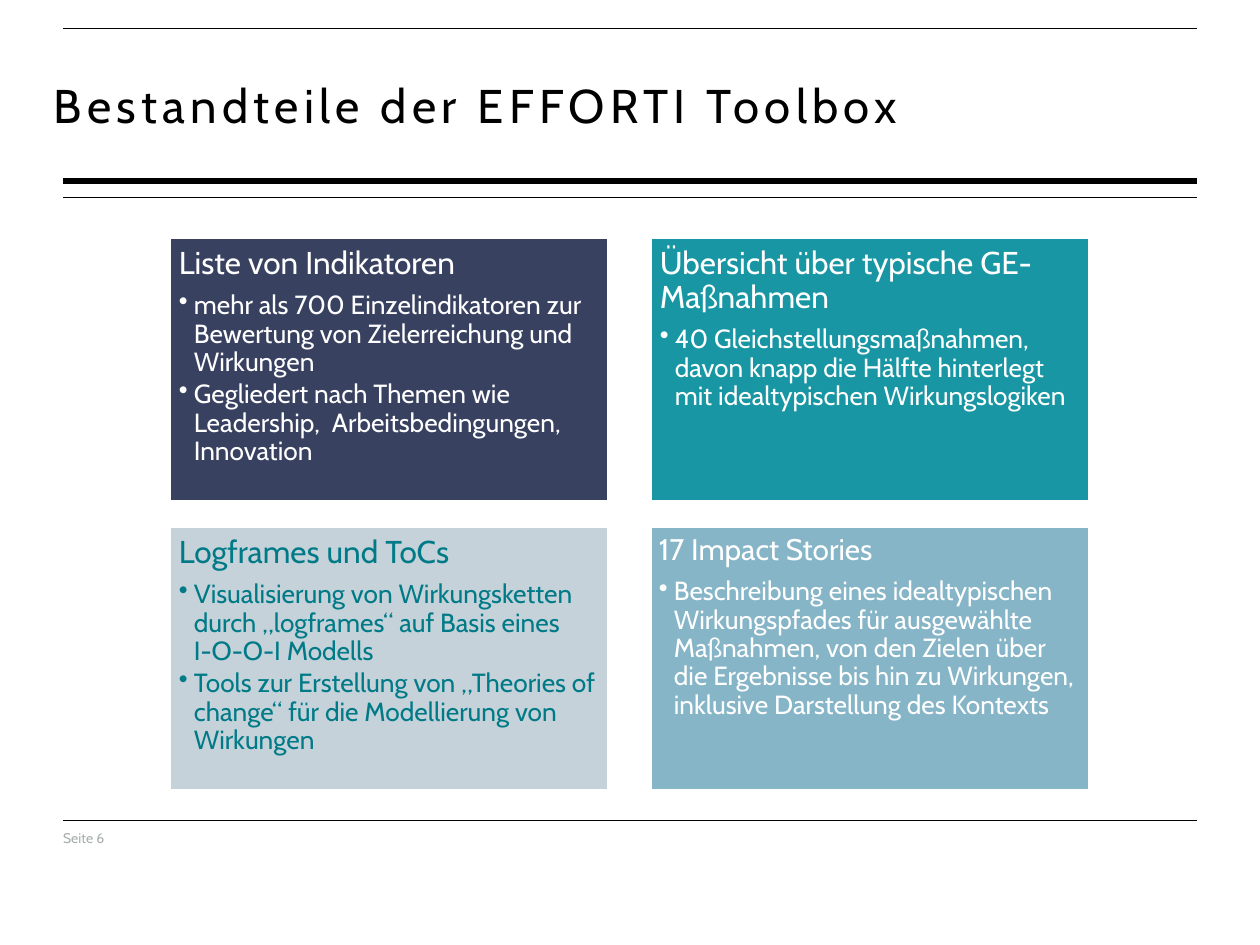
from copy import deepcopy

from lxml import etree
from pptx import Presentation
from pptx import util as u
from pptx.dml.color import RGBColor
from pptx.enum import shapes, text
from pptx.oxml.ns import qn

PX = 914400 / 126
FONT = "Cabin"
LEFT, RIGHT = 63, 1197

# heading, bullets, fill, opacity in percent, text colour, heading size, inset
CARDS = [
    ("Liste von Indikatoren",
     ["mehr als 700 Einzelindikatoren zur Bewertung von Zielerreichung und Wirkungen",
      "Gegliedert nach Themen wie Leadership,  Arbeitsbedingungen, Innovation"],
     "242D50", 90, "FFFFFF", 18, 9),
    ("Übersicht über typische GE-Maßnahmen",
     ["40 Gleichstellungsmaßnahmen, davon knapp die Hälfte hinterlegt mit "
      "idealtypischen Wirkungslogiken"],
     "008B9A", 90, "FFFFFF", 18, 9),
    ("Logframes und ToCs",
     ["Visualisierung von Wirkungsketten durch „logframes“ auf Basis eines\vI-O-O-I Modells",
      "Tools zur Erstellung von „Theories of change“ für die Modellierung von Wirkungen"],
     "C5D2D9", 100, "007A87", 18, 9),
    ("17 Impact Stories",
     ["Beschreibung eines idealtypischen Wirkungspfades für ausgewählte Maßnahmen, "
      "von den Zielen über die Ergebnisse bis hin zu Wirkungen, inklusive Darstellung "
      "des Kontexts"],
     "79AEC1", 90, "FFFFFF", 17, 8),
]


def px(length):
    return u.Emu(round(length * PX))


def box(*lengths):
    return [px(length) for length in lengths]


def rgb(code):
    return RGBColor.from_string(code)


def set_frame(frame, inset):
    formats = {"word_wrap": True, "auto_size": text.MSO_AUTO_SIZE.NONE,
               "vertical_anchor": text.MSO_ANCHOR.TOP}
    formats.update({f"margin_{side}": px(inset)
                    for side in ("left", "top", "right", "bottom")})
    for key, value in formats.items():
        setattr(frame, key, value)


def write(paragraph, words, size, color, **formats):
    """Fill a paragraph; line breaks take the format of the text."""
    paragraph.text = words
    paragraph.alignment = text.PP_ALIGN.LEFT
    for key, value in formats.items():
        setattr(paragraph, key, value)
    for run in paragraph.runs:
        run.font.name, run.font.size = FONT, u.Pt(size)
        run.font.color.rgb = rgb(color)
    for line_break in paragraph._p.findall(qn("a:br")):
        line_break.append(deepcopy(paragraph.runs[0].font._element))


def add_bullet(paragraph, indent):
    props = paragraph._p.get_or_add_pPr()
    props.set("marL", str(px(indent)))
    props.set("indent", str(-px(indent)))
    etree.SubElement(props, qn("a:buChar")).set("char", "•")


def add_label(slide, bounds, words, size, color):
    label = slide.shapes.add_textbox(*box(*bounds))
    set_frame(label.text_frame, 0)
    write(label.text_frame.paragraphs[0], words, size, color)
    return label


def add_rule(slide, y, width):
    rule = slide.shapes.add_connector(shapes.MSO_CONNECTOR.STRAIGHT,
                                      *box(LEFT, y, RIGHT, y))
    rule.line.color.rgb = rgb("000000")
    rule.line.width = u.Pt(width)
    etree.SubElement(rule._element.spPr, qn("a:effectLst"))


def add_header(slide):
    for y, width in ((28, 0.4), (197, 0.4), (181, 3.57)):
        add_rule(slide, y, width)
    title = add_label(slide, (54, 76, 1133, 105),
                      "Bestandteile der EFFORTI Toolbox", 27, "000000")
    title.text_frame.paragraphs[0].runs[0].font._element.set("spc", "300")


def add_footer(slide):
    add_rule(slide, 820, 0.4)
    add_label(slide, (LEFT, 829, 248, 16), "Seite 6", 8, "A8AFAF")


def add_card(slide, bounds, heading, bullets, fill, opacity, color, size, inset):
    card = slide.shapes.add_shape(shapes.MSO_SHAPE.RECTANGLE, *box(*bounds))
    card.shadow.inherit = False
    card.fill.solid()
    card.fill.fore_color.rgb = rgb(fill)
    if opacity < 100:
        tint = card._element.spPr.find(f".//{qn('a:srgbClr')}")
        etree.SubElement(tint, qn("a:alpha")).set("val", str(opacity * 1000))
    card.line.color.rgb = rgb("FFFFFF")
    card.line.width = u.Pt(1.5)

    frame = card.text_frame
    set_frame(frame, inset)
    write(frame.paragraphs[0], heading, size, color,
          line_spacing=0.9, space_after=u.Pt(6.3))
    for bullet in bullets:
        paragraph = frame.add_paragraph()
        add_bullet(paragraph, 15)
        write(paragraph, bullet, 15, color,
              level=1, line_spacing=0.9, space_after=u.Pt(2.25))


def add_card_grid(slide, left, top, width, height, gap_x, gap_y):
    for index, card in enumerate(CARDS):
        row, column = divmod(index, 2)
        bounds = (left + column * (width + gap_x), top + row * (height + gap_y),
                  width, height)
        add_card(slide, bounds, *card)


def main():
    deck = Presentation()
    deck.slide_width, deck.slide_height = box(1260, 945)
    slide = deck.slides.add_slide(deck.slide_layouts[6])
    add_header(slide)
    add_card_grid(slide, 170, 238, 438, 263, 43, 26)
    add_footer(slide)
    deck.save("out.pptx")


if __name__ == "__main__":
    main()
